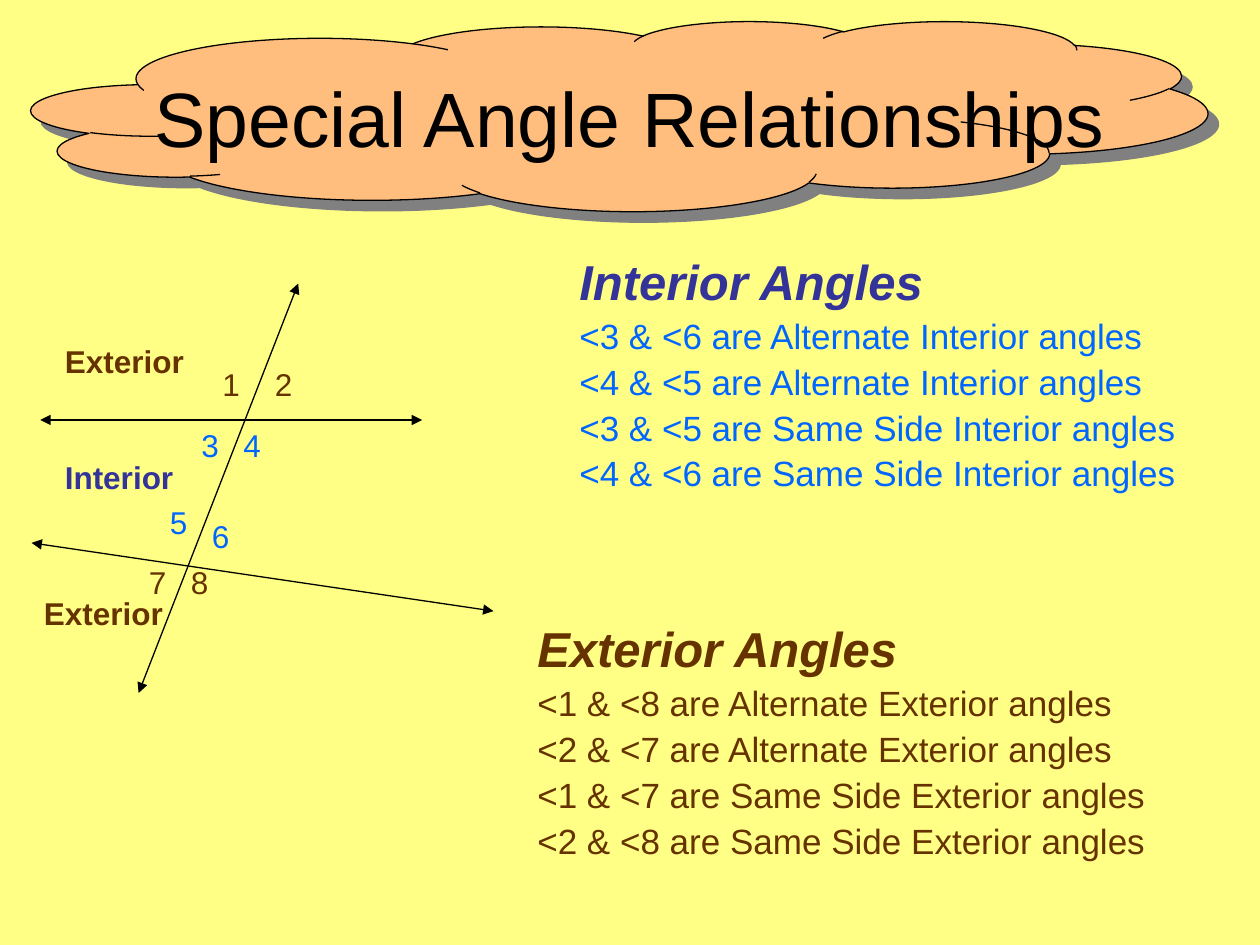
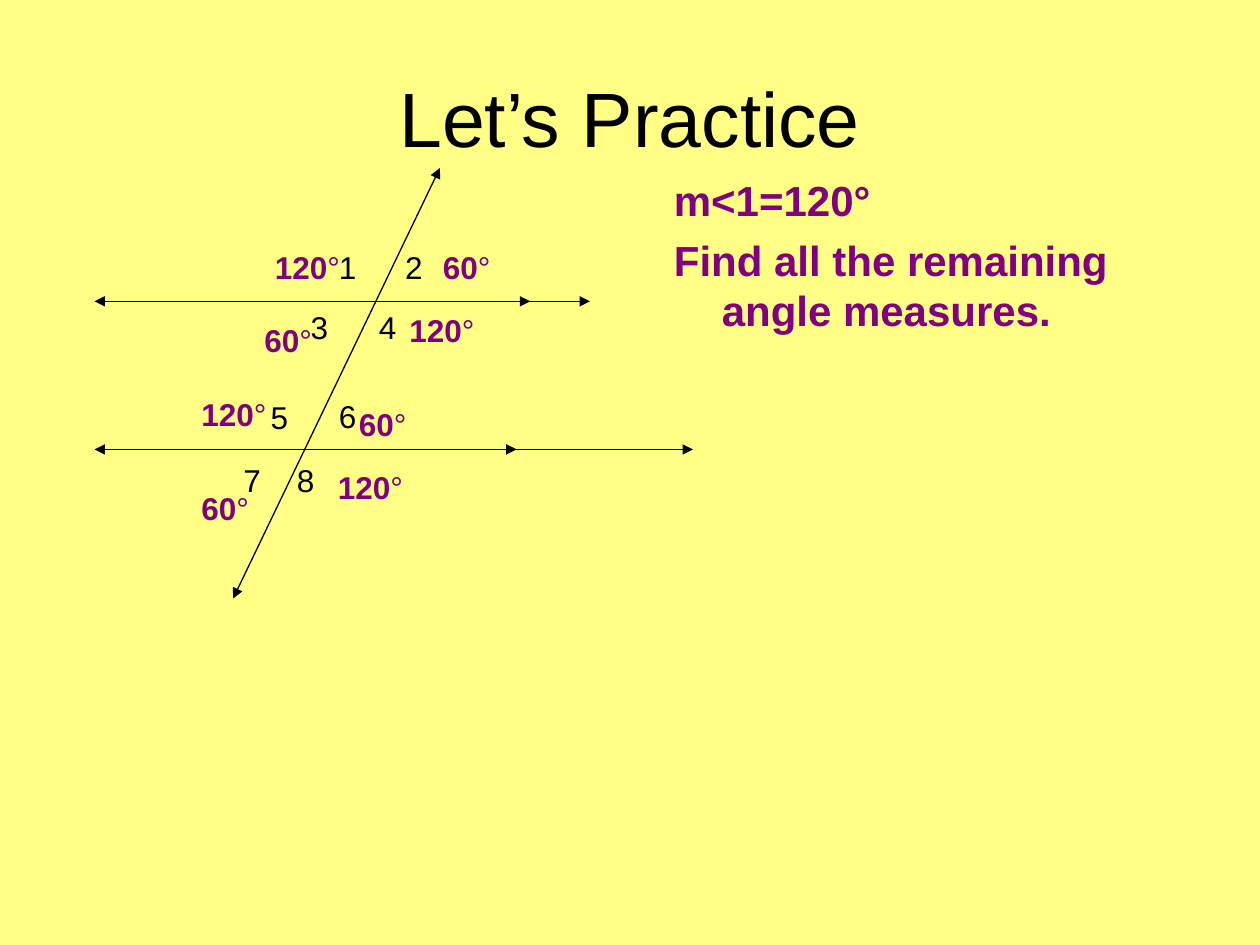
import pptx
import pptx.dml.color
import pptx.enum.shapes
import pptx.enum.text
import pptx.oxml
import pptx.oxml.ns
import pptx.util

RGB = pptx.dml.color.RGBColor
YELLOW = RGB(0xFF, 0xFF, 0x85)
PEACH = RGB(0xFF, 0xBE, 0x7D)
BLACK = RGB(0, 0, 0)
NAVY = RGB(0x33, 0x33, 0x99)
BLUE = RGB(0x00, 0x66, 0xFF)
BROWN = RGB(0x66, 0x33, 0x00)
PURPLE = RGB(0x80, 0x00, 0x80)

ALIGN = pptx.enum.text.PP_ALIGN
ANCHOR = pptx.enum.text.MSO_ANCHOR
NS = pptx.oxml.ns.nsdecls("a")
SHADOW = (f'<a:outerShdw {NS} blurRad="0" dist="107950" dir="2700000" algn="ctr" '
          'rotWithShape="0"><a:srgbClr val="808080"/></a:outerShdw>')

# The grid has 120 columns and 90 rows, each a twelfth of an inch
COLUMNS, ROWS = 120, 90
LABEL_H = 4.8


class Deck:
    """Holds the shared style and the current slide."""

    font = "Arial"
    line_width = pptx.util.Pt(0.75)
    title_fmt = {"size": pptx.util.Pt(44)}
    label_fmt = {"size": pptx.util.Pt(18)}
    hanging = pptx.util.Inches(0.38)

    def __init__(self):
        self.prs = pptx.Presentation()
        self.prs.slide_width = pptx.util.Inches(10)
        self.prs.slide_height = pptx.util.Inches(7.5)

    def grid(self, *lengths):
        """Turn alternating columns and rows into slide lengths."""
        units = (self.prs.slide_width / COLUMNS, self.prs.slide_height / ROWS)
        return [round(n * units[i % 2]) for i, n in enumerate(lengths)]

    def slide(self):
        self.s = self.prs.slides.add_slide(self.prs.slide_layouts[6])
        fill = self.s.background.fill
        fill.solid()
        fill.fore_color.rgb = YELLOW

    def run(self, p, text, color, fmt):
        r = p.add_run()
        r.text = text
        for name, value in {"name": self.font, **fmt}.items():
            setattr(r.font, name, value)
        r.font.color.rgb = color

    def box(self, *place):
        tf = self.s.shapes.add_textbox(*self.grid(*place)).text_frame
        tf.word_wrap = True
        return tf

    def title(self, text):
        tf = self.box(6, 3.6, 108, 15)
        tf.vertical_anchor = ANCHOR.MIDDLE
        p = tf.paragraphs[0]
        p.alignment = ALIGN.CENTER
        self.run(p, text, BLACK, self.title_fmt)

    def label(self, x, y, w, text, color, bold=False, unit=""):
        p = self.box(x, y, w, LABEL_H).paragraphs[0]
        self.run(p, text, color, {**self.label_fmt, "bold": bold})
        if unit:
            self.run(p, unit, color, self.label_fmt)

    def body(self, place, lines, spacing=1.0):
        """Write (text, colour, format) lines with a hanging indent."""
        tf = self.box(*place)
        for i, (text, color, fmt) in enumerate(lines):
            p = tf.add_paragraph() if i else tf.paragraphs[0]
            p.line_spacing = spacing
            if i:
                p.space_before = pptx.util.Pt(round(fmt["size"].pt * 0.23, 1))
            pPr = p._p.get_or_add_pPr()
            pPr.set("marL", str(self.hanging))
            pPr.set("indent", str(-self.hanging))
            self.run(p, text, color, fmt)

    def arrow(self, x1, y1, x2, y2, ends=("headEnd", "tailEnd")):
        sp = self.s.shapes.add_connector(
            pptx.enum.shapes.MSO_CONNECTOR.STRAIGHT, *self.grid(x1, y1, x2, y2))
        sp.line.color.rgb = BLACK
        sp.line.width = self.line_width
        ln = sp.line._get_or_add_ln()
        for end in ends:
            ln.append(pptx.oxml.parse_xml(f'<a:{end} {NS} type="triangle"/>'))
        sp._element.spPr.append(pptx.oxml.parse_xml(f"<a:effectLst {NS}/>"))

    def cloud(self, *place):
        sp = self.s.shapes.add_shape(
            pptx.enum.shapes.MSO_SHAPE.CLOUD, *self.grid(*place))
        sp.fill.solid()
        sp.fill.fore_color.rgb = PEACH
        sp.line.color.rgb = BLACK
        sp.line.width = self.line_width
        sp.shadow.inherit = False
        effects = sp._element.spPr.find(pptx.oxml.ns.qn("a:effectLst"))
        effects.append(pptx.oxml.parse_xml(SHADOW))


def relationships(deck):
    deck.slide()
    deck.cloud(3, 2, 112, 18.1)
    deck.title("Special Angle Relationships")

    # Two lines and their transversal
    deck.arrow(3.84, 40, 40.2, 40)
    deck.arrow(3, 51.7, 47, 58.2)
    deck.arrow(28.4, 27, 13.2, 66)

    # Angle numbers: 3 to 6 lie between the lines
    spots = [(20, 34.2), (25, 34.2), (18, 40), (22, 40),
             (15, 47.3), (19, 48.7), (13, 53), (17, 53)]
    for n, (x, y) in enumerate(spots, 1):
        deck.label(x, y, 4, str(n), BLUE if 3 <= n <= 6 else BROWN)

    # Region names
    deck.label(5, 32, 19, "Exterior", BROWN, bold=True)
    deck.label(5, 43, 24, "Interior", NAVY, bold=True)
    deck.label(3, 56, 19, "Exterior", BROWN, bold=True)

    # Lists of angle pairs
    head = {"size": pptx.util.Pt(28), "bold": True, "italic": True}
    item = {"size": pptx.util.Pt(20)}
    kinds = ["Alternate", "Alternate", "Same Side", "Same Side"]
    for region, x, y, head_color, color, pairs in [
            ("Interior", 54, 24, NAVY, BLUE, ["36", "45", "35", "46"]),
            ("Exterior", 50, 59, BROWN, BROWN, ["18", "27", "17", "28"])]:
        lines = [(f"{region} Angles", head_color, head)]
        lines += [(f"<{a} & <{b} are {kind} {region} angles", color, item)
                  for (a, b), kind in zip(pairs, kinds)]
        deck.body((x, y, 65, 25.4), lines, spacing=0.9)


def practice(deck):
    deck.slide()
    deck.title("Let’s Practice")
    fmt = {"size": pptx.util.Pt(24), "bold": True}
    deck.body((63, 16, 52, 18), [
        ("m<1=120°", PURPLE, fmt),
        ("Find all the remaining angle measures.", PURPLE, fmt)])

    # Parallel lines with their marks, and the transversal
    for y, end, mark in [(28.7, 56.2, 45.2), (42.8, 66, 43.9)]:
        deck.arrow(9, y, end, y)
        deck.arrow(mark, y, mark + 5.3, y, ends=("tailEnd",))
    deck.arrow(41.9, 16, 22.2, 57)

    # Angle numbers
    spots = [(31.1, 23), (37.4, 23), (28.4, 28.7), (34.9, 28.7),
             (24.6, 37.3), (31.1, 37.2), (22, 43.3), (27.1, 43.3)]
    for n, (x, y) in enumerate(spots, 1):
        deck.label(x, y, 5.2, str(n), BLACK)

    # Angle measures
    measures = {
        "60": (7, [(41, 23), (24, 30), (33, 38), (18, 46)]),
        "120": (10, [(25, 23), (37.8, 29), (18, 37), (31, 44)])}
    for value, (w, places) in measures.items():
        for x, y in places:
            deck.label(x, y, w, value, PURPLE, bold=True, unit="°")


def main():
    deck = Deck()
    relationships(deck)
    practice(deck)
    deck.prs.save("out.pptx")


if __name__ == "__main__":
    main()
